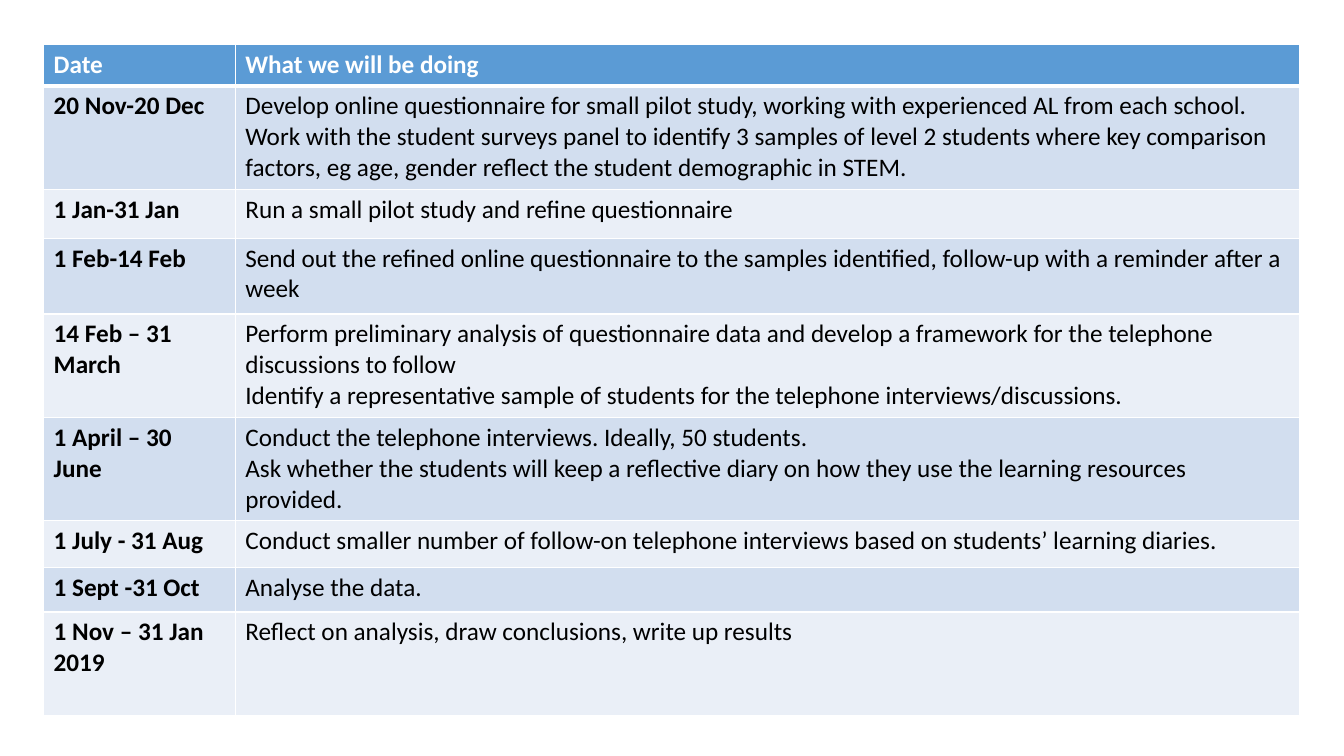
from dataclasses import dataclass

from lxml.etree import SubElement
from pptx import Presentation
from pptx.dml.color import RGBColor
from pptx.oxml.ns import qn
from pptx.util import Cm, Pt


@dataclass(frozen=True)
class Theme:
    font: str = "Calibri"
    text_size: int = 18
    header_fill: str = "5B9BD5"
    bands: tuple = ("D2DEEF", "EAEFF7")
    header_text: str = "FFFFFF"
    body_text: str = "000000"
    rule: str = "FFFFFF"
    thin: int = 1
    thick: int = 3


THEME = Theme()
HEADINGS = ("Date", "What we will be doing")
HEADER_HEIGHT = 1.04
DATE_WIDTH = 4.83

# Row height in cm, date, activities (one paragraph each)
SCHEDULE = [
    (2.61, "20 Nov-20 Dec", [
        "Develop online questionnaire for small pilot study, working with "
        "experienced AL from each school.",
        "Work with the student surveys panel to identify 3 samples of level 2 "
        "students where key comparison factors, eg age, gender reflect the "
        "student demographic in STEM."]),
    (1.23, "1 Jan-31 Jan", ["Run a small pilot study and refine questionnaire"]),
    (1.91, "1 Feb-14 Feb", [
        "Send out the refined online questionnaire to the samples identified, "
        "follow-up with a reminder after a week"]),
    (2.61, "14 Feb – 31 March", [
        "Perform preliminary analysis of questionnaire data and develop a "
        "framework for the telephone discussions to follow",
        "Identify a representative sample of students for the telephone "
        "interviews/discussions."]),
    (2.59, "1 April – 30 June", [
        "Conduct the telephone interviews. Ideally, 50 students.",
        "Ask whether the students will keep a reflective diary on how they use "
        "the learning resources provided."]),
    (1.2, "1 July - 31 Aug", [
        "Conduct smaller number of follow-on telephone interviews based on "
        "students’ learning diaries."]),
    (1.11, "1 Sept -31 Oct", ["Analyse the data."]),
    (2.61, "1 Nov – 31 Jan 2019", [
        "Reflect on analysis, draw conclusions, write up results"]),
]


def set_borders(cell, top, bottom):
    """Draw all four cell borders; top and bottom give widths in points."""
    properties = cell._tc.get_or_add_tcPr()
    widths = {"a:lnL": THEME.thin, "a:lnR": THEME.thin, "a:lnT": top, "a:lnB": bottom}
    for side, width in widths.items():
        line = SubElement(properties, qn(side), w=str(Pt(width)))
        fill = SubElement(line, qn("a:solidFill"))
        SubElement(fill, qn("a:srgbClr"), val=THEME.rule)


def write_cell(cell, paragraphs, color, bold):
    frame = cell.text_frame
    for index, text in enumerate(paragraphs):
        paragraph = frame.add_paragraph() if index else frame.paragraphs[0]
        run = paragraph.add_run()
        run.text = text
        run.font.name = THEME.font
        run.font.size = Pt(THEME.text_size)
        run.font.bold = bold
        run.font.color.rgb = RGBColor.from_string(color)


def add_schedule(slide, left, top, width):
    rows = [(HEADER_HEIGHT, HEADINGS[0], [HEADINGS[1]])] + SCHEDULE
    height = sum(row[0] for row in rows)
    schedule = slide.shapes.add_table(
        len(rows), len(HEADINGS), Cm(left), Cm(top), Cm(width), Cm(height)).table
    schedule.columns[0].width = Cm(DATE_WIDTH)
    schedule.columns[1].width = Cm(width - DATE_WIDTH)

    for index, (row_height, date, activities) in enumerate(rows):
        schedule.rows[index].height = Cm(row_height)
        is_header = index == 0
        fill = THEME.header_fill if is_header else THEME.bands[(index - 1) % 2]
        color = THEME.header_text if is_header else THEME.body_text
        # The thick rule lies between the header and the first date
        top_rule = THEME.thick if index == 1 else THEME.thin
        bottom_rule = THEME.thick if is_header else THEME.thin
        for column, paragraphs in enumerate(([date], activities)):
            cell = schedule.cell(index, column)
            set_borders(cell, top_rule, bottom_rule)
            cell.fill.solid()
            cell.fill.fore_color.rgb = RGBColor.from_string(fill)
            write_cell(cell, paragraphs, color, bold=is_header or column == 0)


def main():
    deck = Presentation()
    deck.slide_width, deck.slide_height = Cm(33.87), Cm(19.05)
    slide = deck.slides.add_slide(deck.slide_layouts[6])
    add_schedule(slide, left=1.1, top=1.12, width=31.66)
    deck.save("out.pptx")


if __name__ == "__main__":
    main()
